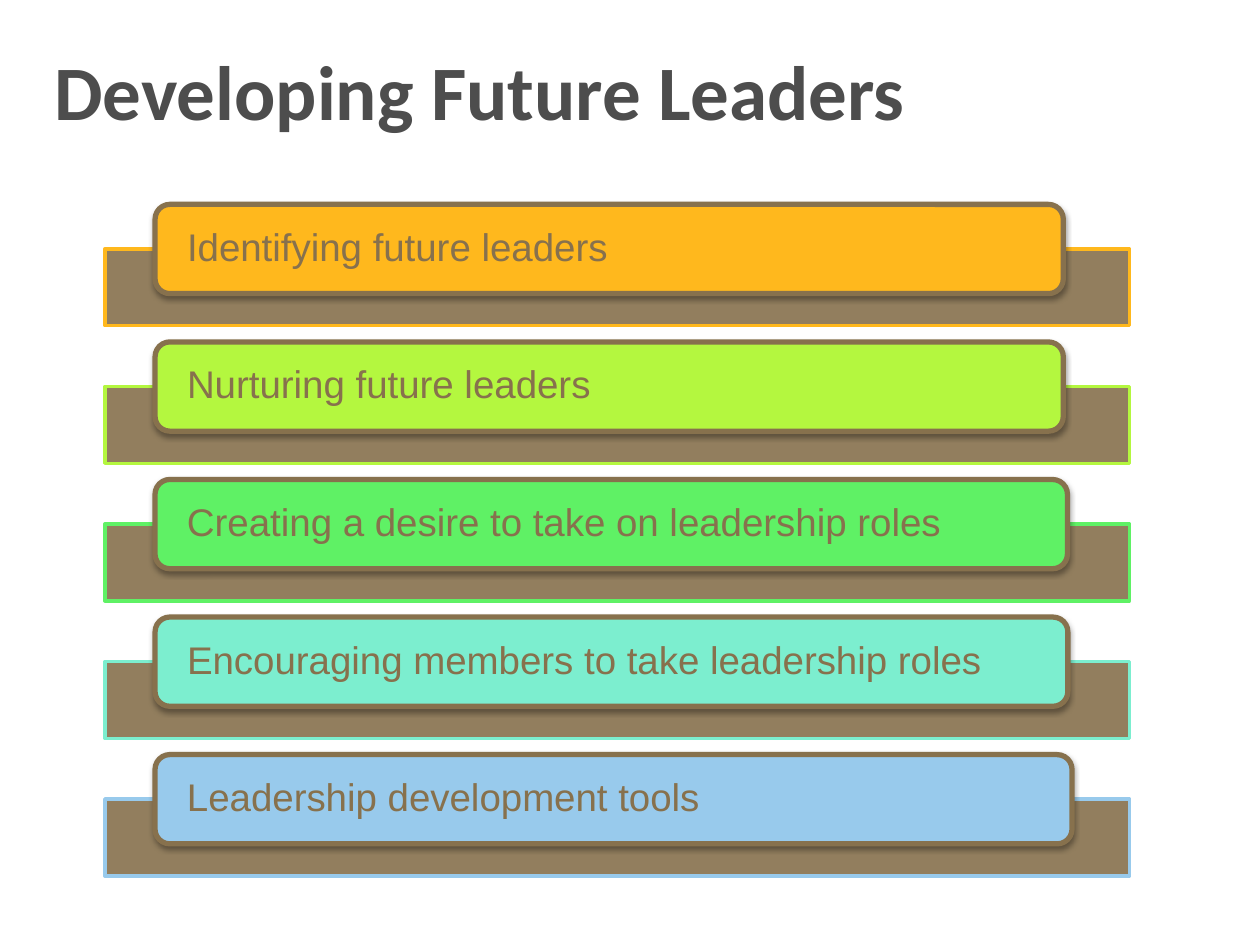
from lxml import etree
from pptx import Presentation
from pptx.dml.color import RGBColor
from pptx.enum import shapes, text
from pptx.oxml import ns
from pptx.util import Pt

BROWN = "87714D"
ROW_PITCH = 78.6
TOPICS = [
    ("Identifying future leaders", "FFB81D", 519),
    ("Nurturing future leaders", "B4F73F", 519),
    ("Creating a desire to take on leadership roles", "5FF165", 521.4),
    ("Encouraging members to take leadership roles", "7CEECF", 521.6),
    ("Leadership development tools", "98CAEC", 524),
]


def paint(color, value):
    color.rgb = RGBColor.from_string(value)


def add_element(parent, tag, **attributes):
    return etree.SubElement(parent, ns.qn(tag), attributes)


def add_run(paragraph, wording, font, size, color, bold=False):
    run = paragraph.add_run()
    run.text = wording
    run.font.name = font
    run.font.size = Pt(size)
    run.font.bold = bold
    paint(run.font.color, color)


def set_margins(frame, side, vertical):
    frame.margin_left = frame.margin_right = Pt(side)
    frame.margin_top = frame.margin_bottom = Pt(vertical)
    frame.word_wrap = True


def add_block(slide, preset, left, top, width, height, fill, line, weight):
    block = slide.shapes.add_shape(
        preset, Pt(left), Pt(top), Pt(width), Pt(height))
    block.shadow.inherit = False
    block.fill.solid()
    paint(block.fill.fore_color, fill)
    paint(block.line.color, line)
    block.line.width = Pt(weight)
    return block


def add_title(slide, wording):
    title = slide.shapes.add_textbox(Pt(27.4), Pt(21.6), Pt(656.6), Pt(90))
    set_margins(title.text_frame, 3.6, 3.6)
    add_run(title.text_frame.paragraphs[0], wording, "Calibri", 44, "4D4D4D", True)


def add_bar(slide, top, accent):
    bar = add_block(slide, shapes.MSO_SHAPE.RECTANGLE,
                    60, top, 585.4, 44, BROWN, accent, 2)
    fill_color = bar.fill._xPr.find(".//" + ns.qn("a:srgbClr"))
    add_element(fill_color, "a:alpha", val="90000")


def add_drop_shadow(shape):
    effects = shape._element.spPr.find(ns.qn("a:effectLst"))
    shadow = add_element(effects, "a:outerShdw", blurRad=str(Pt(3)),
                         dist=str(Pt(1.8)), dir="5400000", rotWithShape="0")
    shadow_color = add_element(shadow, "a:srgbClr", val="000000")
    add_element(shadow_color, "a:alpha", val="35000")


def add_card(slide, top, width, topic, accent):
    card = add_block(slide, shapes.MSO_SHAPE.ROUNDED_RECTANGLE,
                     88.6, top, width, 51, accent, BROWN, 3)
    add_drop_shadow(card)
    frame = card.text_frame
    set_margins(frame, 15.8, 0)
    frame.vertical_anchor = text.MSO_ANCHOR.MIDDLE
    paragraph = frame.paragraphs[0]
    paragraph.alignment = text.PP_ALIGN.LEFT
    paragraph.line_spacing = 0.9
    add_run(paragraph, topic, "Arial", 22, BROWN)


def main():
    deck = Presentation()
    deck.slide_width, deck.slide_height = Pt(720), Pt(540)
    slide = deck.slides.add_slide(deck.slide_layouts[6])
    add_title(slide, "Developing Future Leaders")
    for row, (topic, accent, card_width) in enumerate(TOPICS):
        card_top = 116.8 + row * ROW_PITCH
        add_bar(slide, card_top + 25.4, accent)
        add_card(slide, card_top, card_width, topic, accent)
    deck.save("out.pptx")


if __name__ == "__main__":
    main()
